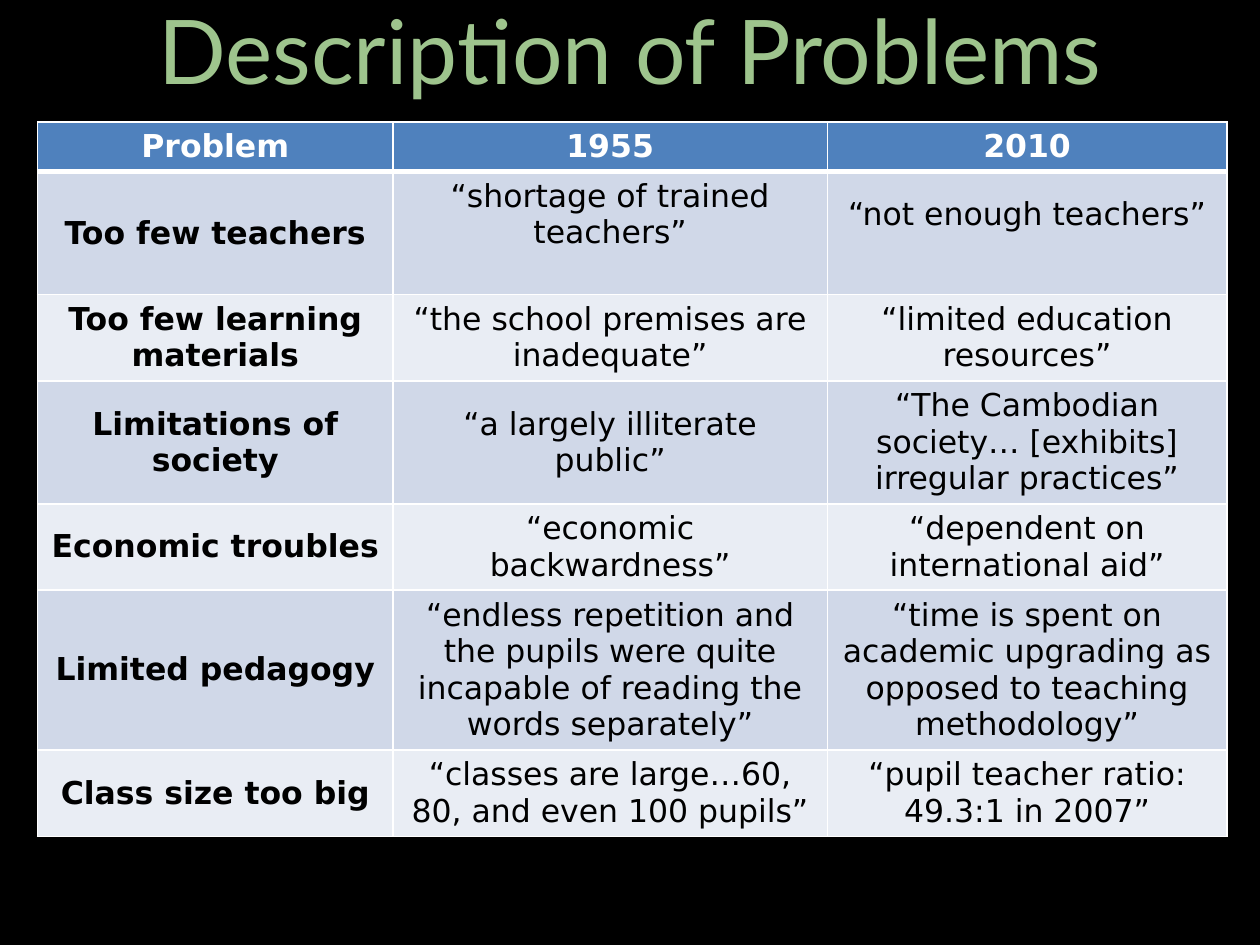
"""Build a slide with a table that compares school problems in 1955 and 2010."""
from lxml import etree
from pptx import Presentation
from pptx.dml.color import RGBColor
from pptx.enum.text import MSO_ANCHOR, PP_ALIGN
from pptx.oxml.ns import qn
from pptx.util import Cm, Pt

CENTER = PP_ALIGN.CENTER
MIDDLE = MSO_ANCHOR.MIDDLE
TOP = MSO_ANCHOR.TOP

BLACK = RGBColor(0x00, 0x00, 0x00)
WHITE = RGBColor(0xFF, 0xFF, 0xFF)
GREEN = RGBColor(0x9E, 0xC4, 0x8D)
HEADER_BLUE = RGBColor(0x4F, 0x81, 0xBD)
BANDS = (RGBColor(0xE9, 0xED, 0xF4), RGBColor(0xD0, 0xD8, 0xE8))

COLUMN_WIDTHS = (7.16, 8.76, 8.05)
LINE_HEIGHT = 0.74
CELL_MARGIN = 0.13
LINES_PER_ROW = (1, 3, 2, 3, 2, 4, 2)
ROWS = (
    ("Problem", "1955", "2010"),
    ("Too few teachers", "“shortage of trained teachers”", "“not enough teachers”"),
    ("Too few learning materials", "“the school premises are inadequate”",
     "“limited education resources”"),
    ("Limitations of society", "“a largely illiterate public”",
     "“The Cambodian society… [exhibits] irregular practices”"),
    ("Economic troubles", "“economic backwardness”", "“dependent on international aid”"),
    ("Limited pedagogy",
     "“endless repetition and the pupils were quite incapable of reading the words separately”",
     "“time is spent on academic upgrading as opposed to teaching methodology”"),
    ("Class size too big", "“classes are large…60, 80, and even 100 pupils”",
     "“pupil teacher ratio: 49.3:1 in 2007”"),
)


def write_text(text_frame, text, font="DejaVu Sans", size=18, color=BLACK, bold=False):
    """Write one centred paragraph in the given format."""
    paragraph = text_frame.paragraphs[0]
    paragraph.alignment = CENTER
    run = paragraph.add_run()
    run.text = text
    run.font.name = font
    run.font.size = Pt(size)
    run.font.color.rgb = color
    run.font.bold = bold


def set_borders(cell, top=1, bottom=1):
    """Give a cell white borders with widths in points."""
    properties = cell._tc.get_or_add_tcPr()
    for side, width in (("L", 1), ("R", 1), ("T", top), ("B", bottom)):
        line = etree.SubElement(properties, qn(f"a:ln{side}"), w=str(Pt(width)))
        fill = etree.SubElement(line, qn("a:solidFill"))
        etree.SubElement(fill, qn("a:srgbClr"), val=str(WHITE))


def format_cell(cell, text, row, column):
    """Fill one table cell according to its row and column."""
    header = row == 0
    set_borders(cell, top=3 if row == 1 else 1, bottom=3 if header else 1)
    cell.fill.solid()
    cell.fill.fore_color.rgb = HEADER_BLUE if header else BANDS[row % 2]
    cell.vertical_anchor = TOP if header else MIDDLE
    if row == 1 and column > 0:
        cell.margin_bottom = Cm(CELL_MARGIN + LINE_HEIGHT)
    write_text(cell.text_frame, text, color=WHITE if header else BLACK,
               bold=header or column == 0)


def add_problem_table(slide):
    """Add the table, with row heights that follow the number of text lines."""
    heights = [2 * CELL_MARGIN + LINE_HEIGHT * lines for lines in LINES_PER_ROW]
    table = slide.shapes.add_table(
        len(ROWS), len(COLUMN_WIDTHS), Cm(0.76), Cm(2.46),
        Cm(sum(COLUMN_WIDTHS)), Cm(sum(heights))).table
    for column, width in zip(table.columns, COLUMN_WIDTHS):
        column.width = Cm(width)
    for row, (height, texts) in enumerate(zip(heights, ROWS)):
        table.rows[row].height = Cm(height)
        for column, text in enumerate(texts):
            format_cell(table.cell(row, column), text, row, column)


def add_title(slide, text):
    """Add the title across the full slide width."""
    shape = slide.shapes.add_textbox(Cm(0), Cm(-0.61), Cm(25.4), Cm(3.18))
    shape.text_frame.word_wrap = True
    shape.text_frame.vertical_anchor = MIDDLE
    write_text(shape.text_frame, text, font="Lato", size=51, color=GREEN)


def main():
    """Create and save the presentation."""
    presentation = Presentation()
    presentation.slide_width = Cm(25.4)
    presentation.slide_height = Cm(19.05)
    slide = presentation.slides.add_slide(presentation.slide_layouts[6])
    slide.background.fill.solid()
    slide.background.fill.fore_color.rgb = BLACK
    add_problem_table(slide)
    add_title(slide, "Description of Problems")
    presentation.save("out.pptx")


if __name__ == "__main__":
    main()
